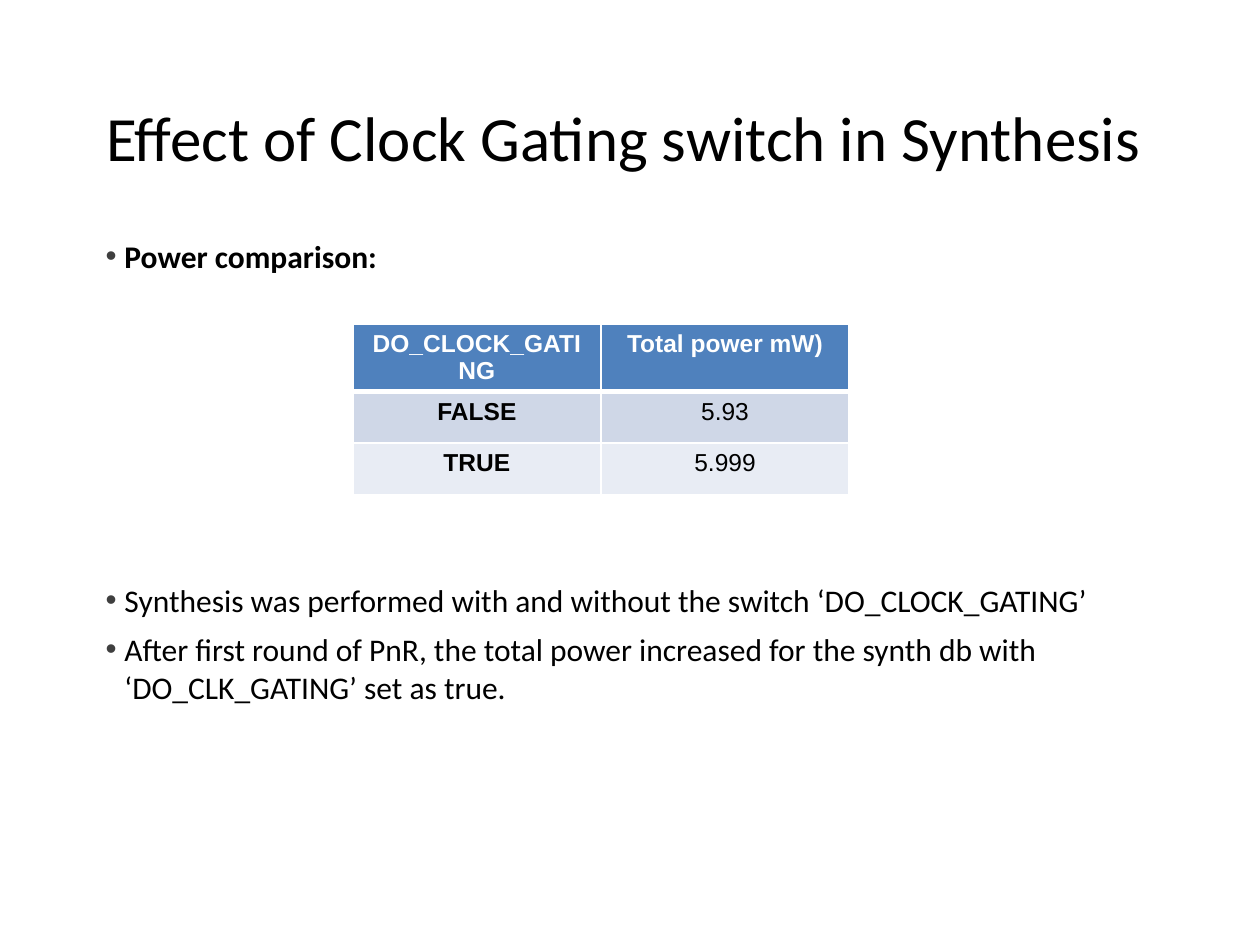
from dataclasses import dataclass

from lxml import etree
from pptx import Presentation
from pptx import util as u
from pptx.dml.color import RGBColor
from pptx.enum import text
from pptx.oxml import ns

BLACK = RGBColor(0x00, 0x00, 0x00)
WHITE = RGBColor(0xFF, 0xFF, 0xFF)
BULLET_GREY = RGBColor(0x3F, 0x3F, 0x3F)
HEADER_BLUE = RGBColor(0x4F, 0x81, 0xBD)
BAND_DARK = RGBColor(0xCF, 0xD7, 0xE7)
BAND_LIGHT = RGBColor(0xE8, 0xEC, 0xF4)


@dataclass
class Bullet:
    wording: str
    space_before: float
    bold: bool = False


@dataclass
class PowerRow:
    cells: tuple[str, str]
    fill: RGBColor
    color: RGBColor
    bold: tuple[bool, bool]
    bottom_border: float = 1


BULLETS = [
    Bullet("Power comparison:", 0, True),
    # The wide gap leaves room for the table
    Bullet("Synthesis was performed with and without the switch ‘DO_CLOCK_GATING’", 175),
    Bullet("After first round of PnR, the total power increased for the synth db with "
           "‘DO_CLK_GATING’ set as true.", 6.4),
]
POWER_ROWS = [
    PowerRow(("DO_CLOCK_GATING", "Total power mW)"), HEADER_BLUE, WHITE, (True, True), 3),
    PowerRow(("FALSE", "5.93"), BAND_DARK, BLACK, (True, False)),
    PowerRow(("TRUE", "5.999"), BAND_LIGHT, BLACK, (True, False)),
]


def add_run(paragraph, wording: str, font: str, size: float, color: RGBColor,
            bold: bool = False) -> None:
    run = paragraph.add_run()
    run.text = wording
    run.font.name = font
    run.font.size = u.Pt(size)
    run.font.bold = bold
    run.font.color.rgb = color


def add_text_frame(slide, left: float, top: float, width: float, height: float):
    shape = slide.shapes.add_textbox(*map(u.Inches, (left, top, width, height)))
    frame = shape.text_frame
    frame.word_wrap = True
    frame.margin_left = frame.margin_right = u.Inches(0.1)
    frame.margin_top = frame.margin_bottom = u.Inches(0.1)
    return frame


def add_bullet(paragraph, bullet: Bullet) -> None:
    properties = paragraph._p.get_or_add_pPr()
    properties.set("marL", str(u.Inches(0.38)))
    properties.set("indent", str(u.Inches(-0.15)))
    bullet_color = etree.SubElement(properties, ns.qn("a:buClr"))
    etree.SubElement(bullet_color, ns.qn("a:srgbClr"), val=str(BULLET_GREY))
    etree.SubElement(properties, ns.qn("a:buFont"), typeface="Arial")
    etree.SubElement(properties, ns.qn("a:buChar"), char="•")
    paragraph.space_before = u.Pt(bullet.space_before)
    add_run(paragraph, bullet.wording, "Calibri", 18, BLACK, bullet.bold)


def set_border(cell, side: str, width: float) -> None:
    line = etree.Element(ns.qn(f"a:{side}"), w=str(u.Pt(width)))
    fill = etree.SubElement(line, ns.qn("a:solidFill"))
    etree.SubElement(fill, ns.qn("a:srgbClr"), val=str(WHITE))
    cell._tc.get_or_add_tcPr().append(line)


def add_power_table(slide, rows: list[PowerRow]) -> None:
    frame = slide.shapes.add_table(len(rows), 2, u.Inches(2.8), u.Inches(2.57),
                                   u.Inches(3.94), u.Inches(0.41 * len(rows)))
    top_border = 1
    for row_index, row in enumerate(rows):
        for column_index, wording in enumerate(row.cells):
            cell = frame.table.cell(row_index, column_index)
            cell.margin_bottom = u.Inches(0.02)
            # Borders come before the fill in the cell properties
            for side, width in (("lnL", 1), ("lnR", 1), ("lnT", top_border),
                                ("lnB", row.bottom_border)):
                set_border(cell, side, width)
            cell.fill.solid()
            cell.fill.fore_color.rgb = row.fill
            paragraph = cell.text_frame.paragraphs[0]
            paragraph.alignment = text.PP_ALIGN.CENTER
            add_run(paragraph, wording, "Arial", 14, row.color, row.bold[column_index])
        top_border = row.bottom_border


def main() -> None:
    presentation = Presentation()
    presentation.slide_width = u.Inches(10)
    presentation.slide_height = u.Inches(7.5)
    slide = presentation.slides.add_slide(presentation.slide_layouts[6])

    # Bulleted body
    body = add_text_frame(slide, 0.51, 1.78, 9, 5.35)
    for index, bullet in enumerate(BULLETS):
        paragraph = body.add_paragraph() if index else body.paragraphs[0]
        add_bullet(paragraph, bullet)

    # Power comparison table
    add_power_table(slide, POWER_ROWS)

    # Title
    title = add_text_frame(slide, 0.51, 0.76, 9, 1.25)
    title.margin_top = u.Inches(0.02)
    title.margin_right = u.Inches(0.22)
    title.paragraphs[0].alignment = text.PP_ALIGN.CENTER
    add_run(title.paragraphs[0], "Effect of Clock Gating switch in Synthesis",
            "Calibri", 36, BLACK)

    presentation.save("out.pptx")


if __name__ == "__main__":
    main()
